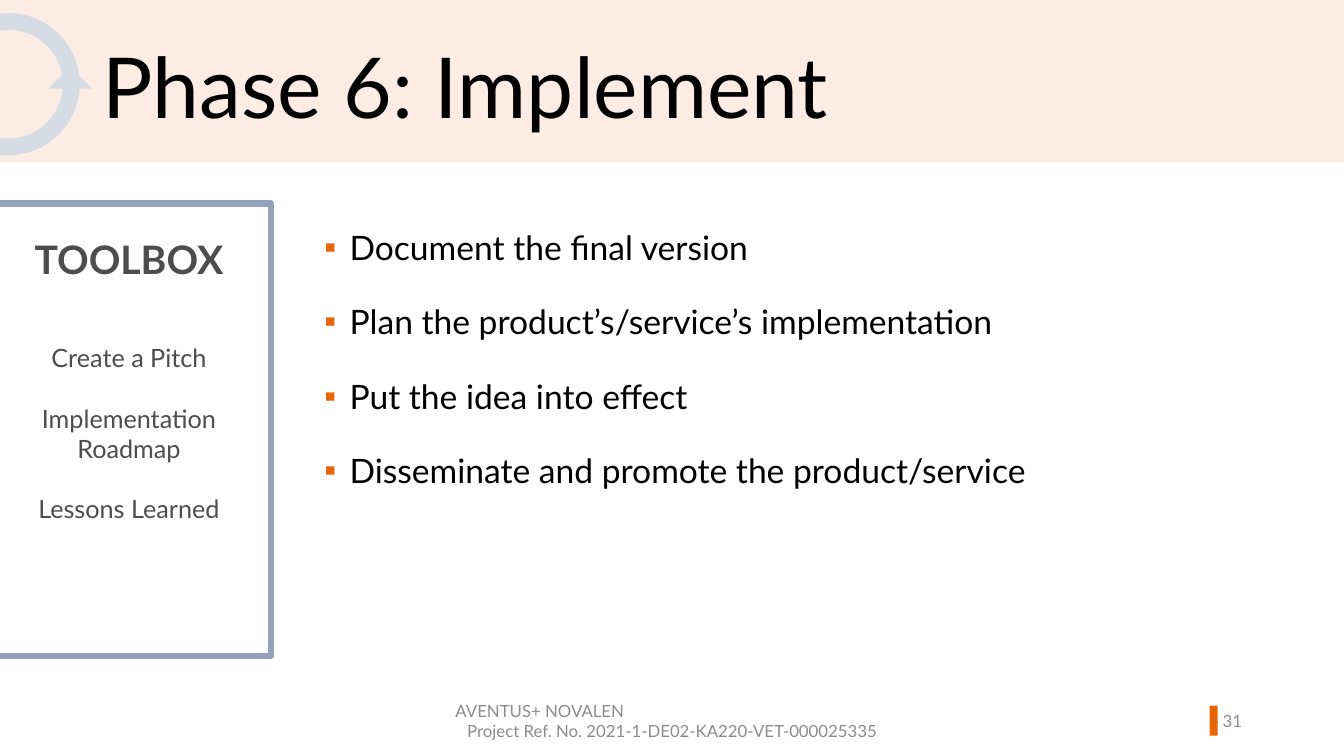
from lxml import etree
from pptx import Presentation
from pptx.dml.color import RGBColor
from pptx.enum.shapes import MSO_SHAPE
from pptx.enum.text import MSO_ANCHOR, PP_ALIGN
from pptx.oxml.ns import qn
from pptx.util import Inches, Pt

RECT, DONUT, ARROW = MSO_SHAPE.RECTANGLE, MSO_SHAPE.DONUT, MSO_SHAPE.ISOSCELES_TRIANGLE
TOP, MIDDLE = MSO_ANCHOR.TOP, MSO_ANCHOR.MIDDLE
LEFT, CENTER, RIGHT = PP_ALIGN.LEFT, PP_ALIGN.CENTER, PP_ALIGN.RIGHT

PEACH = RGBColor(0xFD, 0xEC, 0xE3)
ORANGE = RGBColor(0xE8, 0x65, 0x07)
PALE = RGBColor(0xD6, 0xDC, 0xE5)
STEEL = RGBColor(0x92, 0xA2, 0xBA)
WHITE = RGBColor(0xFF, 0xFF, 0xFF)
BLACK = RGBColor(0, 0, 0)
DARK = RGBColor(0x4D, 0x4D, 0x4D)
GREY = RGBColor(0x8C, 0x8C, 0x8C)

FOOTER = [
    ("AVENTUS+ NOVALEN", LEFT),
    ("Project Ref. No. 2021-1-DE02-KA220-VET-000025335", CENTER),
]
STEPS = [
    "Document the final version",
    "Plan the product’s/service’s implementation",
    "Put the idea into effect",
    "Disseminate and promote the product/service",
]
TOOLS = ["Create a Pitch", "Implementation Roadmap", "Lessons Learned"]


class Deck:
    """Slide builder; places are percentages of the slide's width and height."""

    font = "Lato"

    def __init__(self, wide, high):
        self.prs = Presentation()
        self.prs.slide_width, self.prs.slide_height = wide, high
        self.slide = self.prs.slides.add_slide(self.prs.slide_layouts[6])

    def area(self, left, top, wide, high):
        w, h = self.prs.slide_width / 100, self.prs.slide_height / 100
        return int(left * w), int(top * h), int(wide * w), int(high * h)

    def shape(self, kind, place, fill, line=None, host=None):
        shape = (host or self.slide).shapes.add_shape(kind, *self.area(*place))
        shape.shadow.inherit = False
        shape.fill.solid()
        shape.fill.fore_color.rgb = fill
        if line:
            shape.line.color.rgb = line
            shape.line.width = Pt(4.5)
            etree.SubElement(shape.element.spPr.find(qn("a:ln")), qn("a:round"))
        else:
            shape.line.fill.background()
        return shape

    def box(self, place, anchor=TOP):
        frame = self.slide.shapes.add_textbox(*self.area(*place)).text_frame
        frame.word_wrap = True
        frame.vertical_anchor = anchor
        return frame

    def para(self, frame, text, size, color, bold=False, **layout):
        """Fill the empty first paragraph, or add one after the others."""
        last = frame.paragraphs[-1]
        para = frame.add_paragraph() if last.runs else last
        for name, value in layout.items():
            setattr(para, name, value)
        run = para.add_run()
        run.text = text
        look = {"name": self.font, "size": Pt(size), "bold": bold}
        for name, value in look.items():
            setattr(run.font, name, value)
        run.font.color.rgb = color
        return para

    def bullet(self, para, mark, color):
        props = para._p.get_or_add_pPr()
        indent = Inches(0.25)
        props.set("marL", str(indent))
        props.set("indent", str(-indent))
        tint = etree.SubElement(props, qn("a:buClr"))
        etree.SubElement(tint, qn("a:srgbClr"), val=str(color))
        etree.SubElement(props, qn("a:buFont"), typeface="Arial")
        etree.SubElement(props, qn("a:buChar"), char=mark)


def main():
    deck = Deck(Inches(13.33), Inches(7.5))
    deck.shape(RECT, (0, 0, 100, 21.47), PEACH)
    deck.shape(RECT, (90, 93.33, 0.6, 4), ORANGE)

    body = deck.box((23.4, 26.67, 69.75, 63.47))
    for step in STEPS:
        para = deck.para(body, step, 24, BLACK, line_spacing=1.5, space_before=Pt(10))
        deck.bullet(para, "▪", ORANGE)

    footer = deck.box((33.15, 92.67, 33.75, 5.33), MIDDLE)
    for text, align in FOOTER:
        deck.para(footer, text, 12, GREY, alignment=align)
    number = deck.box((88.28, 92.67, 4.88, 5.33), MIDDLE)
    deck.para(number, "31", 12, GREY, alignment=RIGHT)

    title = deck.box((6.9, 5.47, 74.48, 11.33))
    deck.para(title, "Phase 6: Implement", 60, BLACK, line_spacing=0.9)

    cycle = deck.slide.shapes.add_group_shape()
    ring = deck.shape(DONUT, (-4.65, 1.73, 10.58, 18.8), PALE, host=cycle)
    ring.adjustments[0] = 0.118
    deck.shape(ARROW, (3.6, 8.8, 3.23, 2.93), PALE, host=cycle)

    panel = deck.shape(RECT, (-0.98, 26.93, 21.15, 59.87), WHITE, STEEL).text_frame
    panel.word_wrap = True
    panel.vertical_anchor = TOP
    panel.margin_top = Inches(0.31)
    deck.para(panel, "TOOLBOX", 28, DARK, bold=True, alignment=CENTER, space_after=Pt(21.6))
    for tool in TOOLS:
        deck.para(panel, tool, 18, DARK, alignment=CENTER, space_before=Pt(21.6))

    deck.prs.save("out.pptx")


if __name__ == "__main__":
    main()
